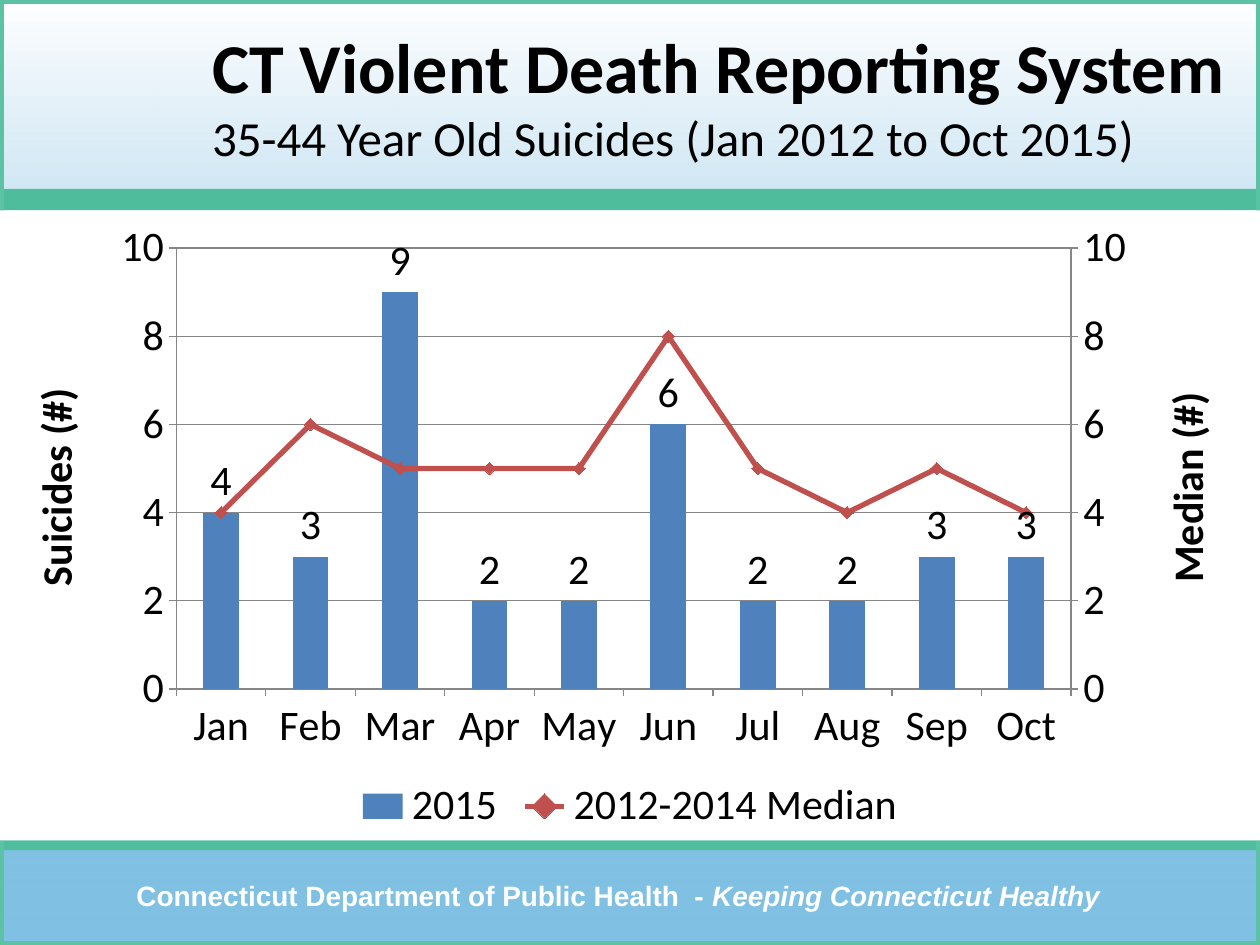
from copy import deepcopy
from dataclasses import dataclass

from lxml.etree import SubElement
from pptx import Presentation
from pptx.chart.data import CategoryChartData
from pptx.dml.color import RGBColor
from pptx.enum.chart import (XL_CHART_TYPE, XL_LABEL_POSITION, XL_LEGEND_POSITION,
                             XL_MARKER_STYLE, XL_TICK_MARK)
from pptx.enum.shapes import MSO_SHAPE
from pptx.enum.text import MSO_ANCHOR, MSO_AUTO_SIZE, PP_ALIGN
from pptx.oxml import parse_xml
from pptx.oxml.ns import nsdecls, qn
from pptx.util import Cm, Pt

COLORS = {"sky": "0082C8", "white": "FFFFFF", "band": "4DBD9C", "frame": "5BC2A4",
          "black": "000000", "bars": "4F81BD", "median": "C0504D", "axis": "868686"}
WIDTH, HEIGHT = 25.4, 19.05
HEADER_BOTTOM, CHART_TOP, CHART_BOTTOM = 3.81, 4.24, 16.94

MONTHS = ["Jan", "Feb", "Mar", "Apr", "May", "Jun", "Jul", "Aug", "Sep", "Oct"]
SUICIDES_2015 = [4, 3, 9, 2, 2, 6, 2, 2, 3, 3]
MEDIAN_2012_2014 = [4, 6, 5, 5, 5, 8, 5, 4, 5, 4]


@dataclass
class Band:
    top: float
    height: float


BANDS = [Band(CHART_BOTTOM, 0.2), Band(HEADER_BOTTOM, CHART_TOP - HEADER_BOTTOM)]


def rgb(name: str) -> RGBColor:
    return RGBColor.from_string(COLORS[name])


def add_text(paragraph, text: str, *, size: float, font: str = "Calibri",
             color: str = "black", bold: bool = False, italic: bool = False) -> None:
    run = paragraph.add_run()
    run.text = text
    run.font.size, run.font.name = Pt(size), font
    run.font.bold, run.font.italic = bold, italic
    run.font.color.rgb = rgb(color)


def add_rectangle(slide, top: float, height: float):
    rectangle = slide.shapes.add_shape(MSO_SHAPE.RECTANGLE, 0, Cm(top), Cm(WIDTH), Cm(height))
    rectangle.shadow.inherit = False
    return rectangle


def add_band(slide, band: Band) -> None:
    strip = add_rectangle(slide, band.top, band.height)
    strip.fill.solid()
    strip.fill.fore_color.rgb = rgb("band")
    strip.line.fill.background()


def add_backdrop(slide) -> None:
    backdrop = add_rectangle(slide, 0, HEIGHT)
    backdrop.line.fill.background()
    backdrop.fill.gradient()
    backdrop.fill.gradient_angle = 90
    for stop, color in zip(backdrop.fill.gradient_stops, ("sky", "white")):
        stop.color.rgb = rgb(color)
    # The blue end is half transparent
    blue = next(backdrop._element.iter(qn("a:srgbClr")))
    SubElement(blue, qn("a:alpha"), val="50000")


def add_footer(slide) -> None:
    footer = slide.shapes.add_textbox(Cm(1.25), Cm(17.58), Cm(22.43), Cm(0.94)).text_frame
    footer.word_wrap = True
    motto = footer.paragraphs[0]
    motto.alignment = PP_ALIGN.CENTER
    style = dict(size=16, font="Arial", color="white", bold=True)
    add_text(motto, "Connecticut Department of Public Health  - ", **style)
    add_text(motto, "Keeping Connecticut Healthy", italic=True, **style)


def add_frame(slide) -> None:
    frame = add_rectangle(slide, 0, HEIGHT)
    frame.fill.background()
    frame.line.color.rgb = rgb("frame")
    frame.line.width = Pt(4.5)


def fill_title(slide) -> None:
    title = slide.shapes.title
    slide.shapes._spTree.append(title._element)  # in front of the backdrop
    title.left, title.top, title.width, title.height = Cm(4.02), 0, Cm(21.17), Cm(HEADER_BOTTOM)
    title.text_frame.auto_size = MSO_AUTO_SIZE.NONE
    title.text_frame.vertical_anchor = MSO_ANCHOR.MIDDLE
    heading = title.text_frame.paragraphs[0]
    heading.alignment = PP_ALIGN.LEFT
    add_text(heading, "CT Violent Death Reporting System", size=40, bold=True)
    heading.add_line_break()
    add_text(heading, "35-44 Year Old Suicides (Jan 2012 to Oct 2015)", size=28)


def format_axis(axis) -> None:
    axis.major_tick_mark = XL_TICK_MARK.OUTSIDE
    axis.minor_tick_mark = XL_TICK_MARK.NONE
    axis.format.line.color.rgb = rgb("axis")
    axis.format.line.width = Pt(0.75)


def remove_children(parent, tag: str) -> None:
    for child in parent.findall(qn(tag)):
        parent.remove(child)


def move_median_to_right_axis(chart) -> None:
    """Turn the second series into a line on a secondary value axis."""
    plot_area = chart._chartSpace.chart.plotArea
    bar_plot = plot_area.find(qn("c:barChart"))
    median = bar_plot.findall(qn("c:ser"))[1]
    remove_children(median, "c:invertIfNegative")
    line_plot = parse_xml(
        f'<c:lineChart {nsdecls("c")}><c:grouping val="standard"/><c:varyColors val="0"/>'
        '<c:marker val="1"/><c:axId val="5001"/><c:axId val="5002"/></c:lineChart>')
    line_plot.insert(2, median)
    bar_plot.addnext(line_plot)

    months = plot_area.find(qn("c:catAx"))
    left = plot_area.find(qn("c:valAx"))
    right, hidden_months = deepcopy(left), deepcopy(months)
    left.addnext(right)
    right.addnext(hidden_months)
    for axis, own, other in ((right, "5002", "5001"), (hidden_months, "5001", "5002")):
        axis.find(qn("c:axId")).set("val", own)
        axis.find(qn("c:crossAx")).set("val", other)
    hidden_months.find(qn("c:delete")).set("val", "1")
    right.find(qn("c:axPos")).set("val", "r")
    right.find(qn("c:crosses")).set("val", "max")
    remove_children(right, "c:majorGridlines")
    next(right.iter(qn("a:t"))).text = "Median (#)"


def add_suicide_chart(slide) -> None:
    figures = CategoryChartData()
    figures.categories = MONTHS
    figures.add_series("2015", SUICIDES_2015)
    figures.add_series("2012-2014 Median", MEDIAN_2012_2014)
    chart = slide.shapes.add_chart(XL_CHART_TYPE.COLUMN_CLUSTERED, 0, Cm(CHART_TOP), Cm(WIDTH),
                                   Cm(CHART_BOTTOM - CHART_TOP), figures).chart
    chart.has_title = False
    chart.font.size, chart.font.name = Pt(24), "Calibri"
    chart.font.color.rgb = rgb("black")
    chart.has_legend = True
    chart.legend.position = XL_LEGEND_POSITION.BOTTOM
    chart.legend.include_in_layout = False

    # Axes
    counts = chart.value_axis
    format_axis(chart.category_axis)
    format_axis(counts)
    counts.minimum_scale, counts.maximum_scale, counts.major_unit = 0, 10, 2
    counts.major_gridlines.format.line.color.rgb = rgb("axis")
    counts.major_gridlines.format.line.width = Pt(0.75)
    axis_title = counts.axis_title.text_frame
    add_text(axis_title.paragraphs[0], "Suicides (#)", size=24, bold=True)
    axis_title._txBody.find(qn("a:bodyPr")).set("rot", "-5400000")
    move_median_to_right_axis(chart)

    # Columns
    columns, median_line = chart.plots
    columns.gap_width = 150
    columns.vary_by_categories = False
    year = columns.series[0]
    year.format.fill.solid()
    year.format.fill.fore_color.rgb = rgb("bars")
    year.data_labels.show_value = True
    year.data_labels.position = XL_LABEL_POSITION.OUTSIDE_END

    # Line
    median = median_line.series[0]
    median.smooth = False
    median.format.line.color.rgb = rgb("median")
    median.format.line.width = Pt(3)
    median.marker.style, median.marker.size = XL_MARKER_STYLE.DIAMOND, 7
    median.marker.format.fill.solid()
    median.marker.format.fill.fore_color.rgb = rgb("median")
    median.marker.format.line.color.rgb = rgb("median")

    # White ground and fixed plot frame
    plot_area = chart._chartSpace.chart.plotArea
    remove_children(plot_area, "c:layout")
    frame = {"xMode": "edge", "yMode": "edge", "x": 0.14, "y": 0.06, "w": 0.71, "h": 0.7}
    parts = "".join(f'<c:{key} val="{value}"/>' for key, value in frame.items())
    plot_area.insert(0, parse_xml(
        f'<c:layout {nsdecls("c")}><c:manualLayout><c:layoutTarget val="inner"/>'
        f'{parts}</c:manualLayout></c:layout>'))
    chart._chartSpace.chart.addnext(parse_xml(
        f'<c:spPr {nsdecls("c", "a")}><a:solidFill><a:srgbClr val="{COLORS["white"]}"/>'
        '</a:solidFill><a:ln><a:noFill/></a:ln></c:spPr>'))


def main() -> None:
    deck = Presentation()
    deck.slide_width, deck.slide_height = Cm(WIDTH), Cm(HEIGHT)
    slide = deck.slides.add_slide(deck.slide_layouts[5])
    add_backdrop(slide)
    for band in BANDS:
        add_band(slide, band)
    add_footer(slide)
    add_frame(slide)
    fill_title(slide)
    add_suicide_chart(slide)
    deck.save("out.pptx")


if __name__ == "__main__":
    main()
